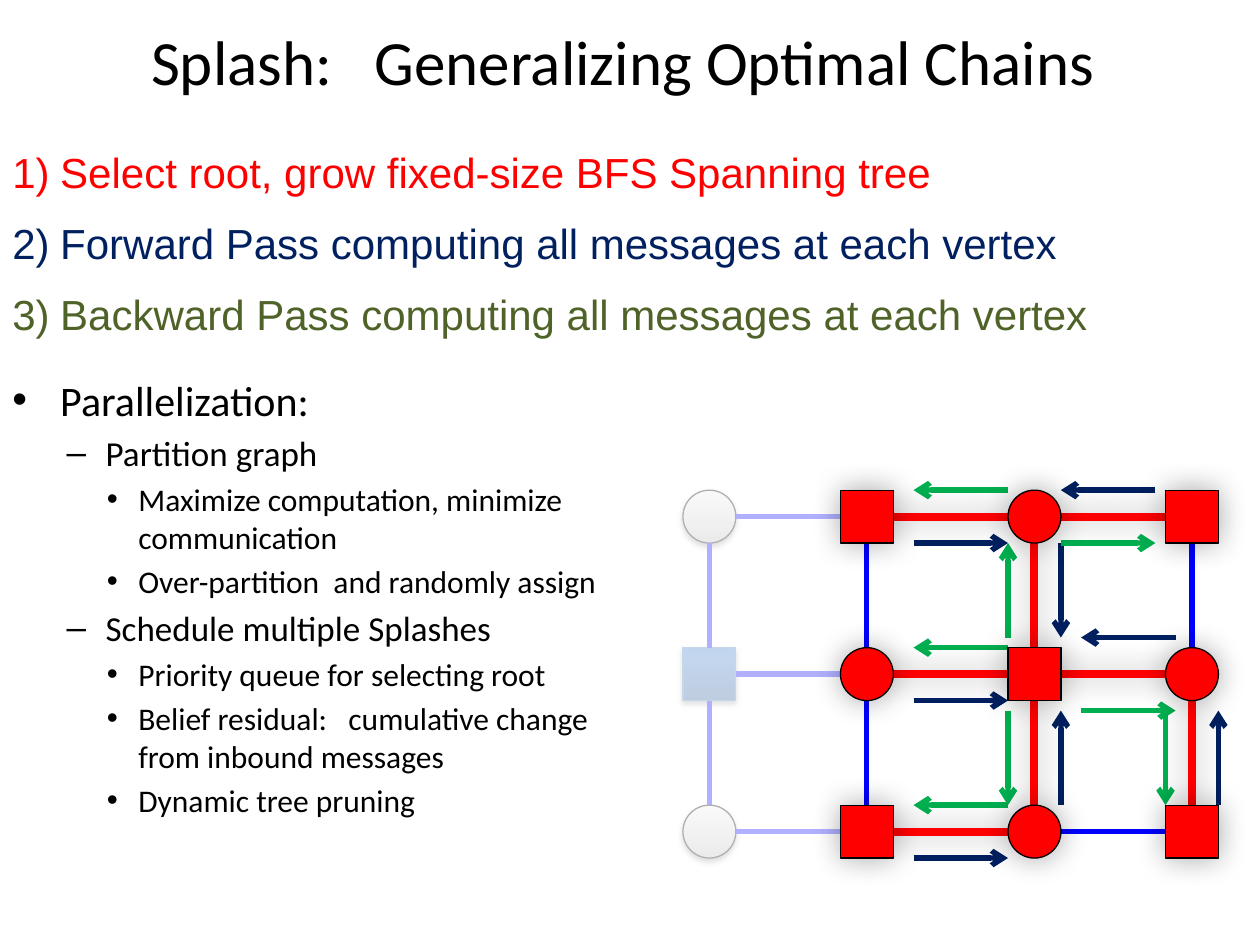
from lxml import etree
from pptx import Presentation
from pptx.dml.color import RGBColor
from pptx.enum.shapes import MSO_CONNECTOR, MSO_SHAPE
from pptx.enum.text import MSO_ANCHOR, PP_ALIGN
from pptx.oxml import parse_xml
from pptx.oxml.ns import nsdecls, qn
from pptx.util import Inches, Pt

RECTANGLE, OVAL = MSO_SHAPE.RECTANGLE, MSO_SHAPE.OVAL
STRAIGHT = MSO_CONNECTOR.STRAIGHT
LEFT, CENTER = PP_ALIGN.LEFT, PP_ALIGN.CENTER
TOP, MIDDLE = MSO_ANCHOR.TOP, MSO_ANCHOR.MIDDLE

BLACK = RGBColor(0x00, 0x00, 0x00)
WHITE = RGBColor(0xFF, 0xFF, 0xFF)
RED = RGBColor(0xFF, 0x00, 0x00)
BLUE = RGBColor(0x00, 0x00, 0xFF)
NAVY = RGBColor(0x00, 0x20, 0x60)
GREEN = RGBColor(0x00, 0xB0, 0x50)
OLIVE = RGBColor(0x4F, 0x62, 0x28)
STEEL = RGBColor(0x4B, 0x7E, 0xBC)

GRAY_GRADIENT = ((0, "BDBDBD"), (35, "D1D1D1"), (100, "EEEEEE"))
BLUE_GRADIENT = ((0, "2F5F99"), (80, "3D7CC7"), (100, "3A7CCB"))

# Shadows: blur and distance in points, direction in degrees, opacity in percent
DROP_SHADOW = (3.1, 1.7, 90, 37)
GLOW_SHADOW = (17, 0, 0, 35)

STEPS = [
    ("Select root, grow fixed-size BFS Spanning tree", RED),
    ("Forward Pass computing all messages at each vertex", NAVY),
    ("Backward Pass computing all messages at each vertex", OLIVE),
]
OUTLINE = [
    (0, "Parallelization:"),
    (1, "Partition graph"),
    (2, "Maximize computation, minimize communication"),
    (2, "Over-partition  and randomly assign"),
    (1, "Schedule multiple Splashes"),
    (2, "Priority queue for selecting root"),
    (2, "Belief residual:   cumulative change from inbound messages"),
    (2, "Dynamic tree pruning"),
]
# Level: bullet, size, left margin, hanging indent
OUTLINE_LEVELS = [("•", 24, 0.38, 0.38), ("–", 20, 0.74, 0.31), ("•", 18, 1, 0.25)]

# Graph geometry, relative to the graph box
NODE = 0.42
COLUMNS = (0.09, 1.34, 2.67, 3.92)
ROWS = (0.16, 1.41, 2.66)
ROOT = (1, 2)
# Each branch runs from parent to child as (row, column), farthest drawn first
TREE = [
    ((1, 2), (2, 2)), ((1, 2), (1, 1)), ((0, 2), (0, 3)), ((0, 2), (0, 1)),
    ((1, 3), (2, 3)), ((2, 2), (2, 1)), ((1, 2), (0, 2)), ((1, 2), (1, 3)),
]
ARROW = 0.75
DIRECTIONS = {"right": (1, 0), "left": (-1, 0), "up": (0, -1), "down": (0, 1)}
# Start point of each message arrow and its direction
FORWARD = [
    (1.92, 0.58, "right"), (3.84, 0.16, "left"), (1.92, 1.83, "right"),
    (1.92, 3.08, "right"), (4, 1.33, "left"), (3.09, 0.58, "down"),
    (3.09, 2.66, "up"), (4.34, 2.66, "up"),
]
BACKWARD = [
    (3.09, 0.58, "right"), (2.67, 0.16, "left"), (3.25, 1.91, "right"),
    (2.67, 2.66, "left"), (2.67, 1.41, "left"), (2.67, 1.91, "down"),
    (2.67, 1.33, "up"), (3.92, 1.91, "down"),
]


def set_shadow(element, shadow=None):
    """Replace the theme shadow by the given one, or by none."""
    properties = element._element.spPr
    effects = properties.find(qn("a:effectLst"))
    if effects is None:
        effects = etree.SubElement(properties, qn("a:effectLst"))
    if shadow:
        blur, distance, angle, opacity = shadow
        effects.append(parse_xml(
            f'<a:outerShdw {nsdecls("a")} blurRad="{Pt(blur)}" dist="{Pt(distance)}" '
            f'dir="{angle * 60000}" algn="ctr" rotWithShape="0"><a:srgbClr val="000000">'
            f'<a:alpha val="{opacity * 1000}"/></a:srgbClr></a:outerShdw>'))


def add_line(slide, start, end, color, width, shadow=None, arrow=False):
    line = slide.shapes.add_connector(STRAIGHT, *map(Inches, (*start, *end)))
    line.line.color.rgb = color
    line.line.width = Pt(width)
    if arrow:
        etree.SubElement(line.line._get_or_add_ln(), qn("a:tailEnd"), type="arrow")
    set_shadow(line, shadow)


def add_text_box(slide, box, anchor=TOP):
    frame = slide.shapes.add_textbox(*map(Inches, box)).text_frame
    frame.word_wrap = True
    frame.vertical_anchor = anchor
    return frame


def add_paragraph(frame, text, font_name, size, color, alignment=LEFT, space_before=0):
    first = frame.paragraphs[0]
    paragraph = frame.add_paragraph() if first.runs else first
    paragraph.alignment = alignment
    paragraph.space_before = Pt(space_before)
    run = paragraph.add_run()
    run.text = text
    for name, value in {"name": font_name, "size": Pt(size)}.items():
        setattr(run.font, name, value)
    run.font.color.rgb = color
    return paragraph


def set_bullet(paragraph, margin, hanging, tag, **attributes):
    properties = paragraph._p.get_or_add_pPr()
    properties.set("marL", str(Inches(margin)))
    properties.set("indent", str(-Inches(hanging)))
    etree.SubElement(properties, qn("a:buFont"), typeface="Arial")
    etree.SubElement(properties, qn(tag), **attributes)


def add_title(slide, box):
    frame = add_text_box(slide, box, MIDDLE)
    add_paragraph(frame, "Splash:   Generalizing Optimal Chains ", "Calibri", 36, BLACK, CENTER)


def add_steps(slide, box):
    frame = add_text_box(slide, box)
    for text, color in STEPS:
        paragraph = add_paragraph(frame, text, "Arial", 24, color, space_before=12)
        set_bullet(paragraph, 0.38, 0.38, "a:buAutoNum", type="arabicParenR")


def add_outline(slide, box):
    frame = add_text_box(slide, box)
    for level, text in OUTLINE:
        bullet, size, margin, hanging = OUTLINE_LEVELS[level]
        paragraph = add_paragraph(frame, text, "Calibri", size, BLACK, space_before=size * 0.2)
        paragraph.level = level
        set_bullet(paragraph, margin, hanging, "a:buChar", char=bullet)


def set_gradient(shape, stops):
    shape.fill.gradient()
    shape.fill.gradient_angle = 90
    stop_list = shape._element.spPr.find(qn("a:gradFill")).find(qn("a:gsLst"))
    for stop in list(stop_list):
        stop_list.remove(stop)
    for position, color in stops:
        stop = etree.SubElement(stop_list, qn("a:gs"), pos=str(position * 1000))
        etree.SubElement(stop, qn("a:srgbClr"), val=color)


def add_graph(slide, box):
    left, top, width, height = box

    def add_node(row, column, shadow, line_color=BLACK):
        """Factors are squares and variables circles, in a checkerboard."""
        kind = RECTANGLE if (row + column) % 2 else OVAL
        corner = (left + COLUMNS[column], top + ROWS[row])
        node = slide.shapes.add_shape(kind, *map(Inches, (*corner, NODE, NODE)))
        node.shadow.inherit = False
        node.line.color.rgb = line_color
        node.line.width = Pt(0.75)
        set_shadow(node, shadow)
        return node

    def add_edge(start, end, color, width, shadow=None):
        """Join the facing borders of two neighbouring nodes."""
        down, right = end[0] - start[0], end[1] - start[1]
        half = NODE / 2
        points = [(left + COLUMNS[column] + half + sign * right * half,
                   top + ROWS[row] + half + sign * down * half)
                  for (row, column), sign in ((start, 1), (end, -1))]
        add_line(slide, *points, color, width, shadow)

    def add_grid_edges(columns):
        for column in columns:
            for row in range(len(ROWS)):
                if column + 1 < len(COLUMNS):
                    add_edge((row, column), (row, column + 1), BLUE, 3)
                if row + 1 < len(ROWS):
                    add_edge((row, column), (row + 1, column), BLUE, 3)

    for row in range(len(ROWS)):
        is_factor = row % 2
        node = add_node(row, 0, DROP_SHADOW, STEEL if is_factor else BLACK)
        set_gradient(node, BLUE_GRADIENT if is_factor else GRAY_GRADIENT)
    add_grid_edges([0])

    veil = slide.shapes.add_shape(RECTANGLE, *map(Inches, box))
    veil.shadow.inherit = False
    veil.fill.solid()
    veil.fill.fore_color.rgb = WHITE
    veil.line.fill.background()
    etree.SubElement(veil._element.spPr.find(qn("a:solidFill"))[0], qn("a:alpha"), val="69000")

    add_grid_edges(range(1, len(COLUMNS)))
    for color, arrows in ((NAVY, FORWARD), (GREEN, BACKWARD)):
        for x, y, direction in arrows:
            across, down = DIRECTIONS[direction]
            start = (left + x, top + y)
            end = (start[0] + across * ARROW, start[1] + down * ARROW)
            add_line(slide, start, end, color, 3, arrow=True)

    for parent, child in TREE:
        add_edge(parent, child, RED, 4.5, GLOW_SHADOW)
    for place in [child for _, child in TREE] + [ROOT]:
        node = add_node(*place, GLOW_SHADOW)
        node.fill.solid()
        node.fill.fore_color.rgb = RED


def main():
    presentation = Presentation()
    presentation.slide_width, presentation.slide_height = Inches(10), Inches(7.5)
    slide = presentation.slides.add_slide(presentation.slide_layouts[6])
    add_title(slide, (0.5, 0, 9, 0.95))
    add_steps(slide, (0, 1.11, 10, 1.89))
    add_graph(slide, (5.33, 3.73, 4.58, 3.17))
    add_outline(slide, (0, 2.92, 5, 3.92))
    presentation.save("out.pptx")


if __name__ == "__main__":
    main()
